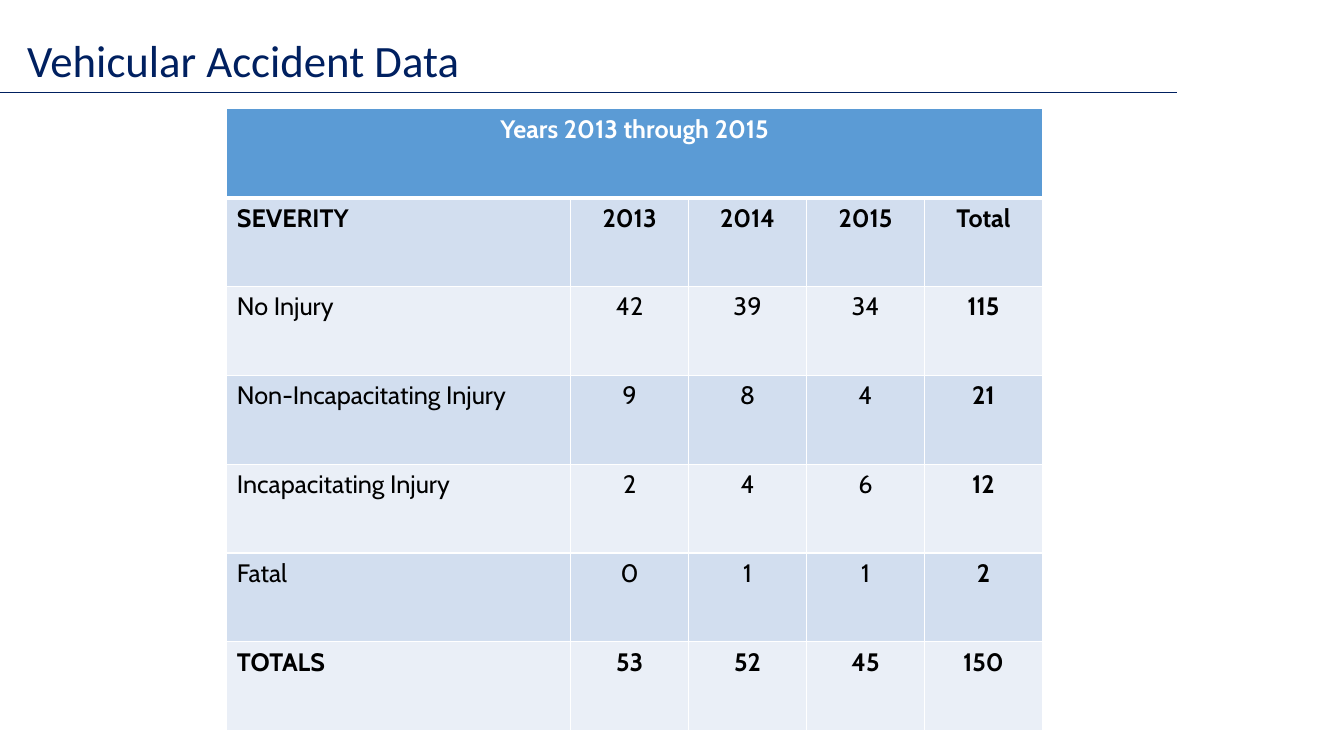
from lxml.etree import SubElement
from pptx import Presentation
from pptx.dml.color import RGBColor
from pptx.enum.shapes import MSO_CONNECTOR as Conn
from pptx.enum.text import MSO_ANCHOR as Anchor, PP_ALIGN as Align
from pptx.oxml.ns import qn
from pptx.util import Inches, Pt

NAVY, WHITE, BLACK = "002060", "FFFFFF", "000000"
HEAD, BANDS = "5B9BD5", ("D2DEEF", "EAEFF7")
ROWS = [
    ["Years 2013 through 2015", "", "", "", ""],
    ["SEVERITY", "2013", "2014", "2015", "Total"],
    ["No Injury", "42", "39", "34", "115"],
    ["Non-Incapacitating Injury", "9", "8", "4", "21"],
    ["Incapacitating Injury", "2", "4", "6", "12"],
    ["Fatal", "0", "1", "1", "2"],
    ["TOTALS", "53", "52", "45", "150"],
]
WIDTHS = [3.41] + [1.17] * 4
HIGH = 6.17 / len(ROWS)


def style(para, text, face, size, color, bold=False):
    """Add one formatted run to a paragraph."""
    run = para.add_run()
    run.text = text
    font = run.font
    font.name, font.size, font.bold = face, Pt(size), bold
    font.color.rgb = RGBColor.from_string(color)


def edge(cell, side, width):
    """Draw one white border of a cell."""
    line = SubElement(cell._tc.get_or_add_tcPr(), qn("a:ln" + side), w=str(Pt(width)))
    fill = SubElement(line, qn("a:solidFill"))
    SubElement(fill, qn("a:srgbClr"), val=WHITE)


deck = Presentation()
deck.slide_width, deck.slide_height = Inches(13.33), Inches(7.5)
slide = deck.slides.add_slide(deck.slide_layouts[5])

# Title and rule
title = slide.shapes.title
title.left, title.top = Inches(0.17), Inches(0)
title.width, title.height = Inches(13), Inches(0.92)
title.text_frame.vertical_anchor = Anchor.BOTTOM
para = title.text_frame.paragraphs[0]
para.alignment, para.line_spacing = Align.LEFT, 0.9
style(para, "Vehicular Accident Data", "Calibri", 32, NAVY)

rule = slide.shapes.add_connector(
    Conn.STRAIGHT, 0, Inches(0.92), Inches(11.67), Inches(0.92))
rule.line.color.rgb = RGBColor.from_string(NAVY)
rule.line.width = Pt(0.5)
SubElement(rule._element.spPr, qn("a:effectLst"))

# Accident table
table = slide.shapes.add_table(
    len(ROWS), len(WIDTHS), Inches(2.25), Inches(1.08),
    Inches(sum(WIDTHS)), Inches(HIGH * len(ROWS))).table
for col, width in zip(table.columns, WIDTHS):
    col.width = Inches(width)
for row in table.rows:
    row.height = Inches(HIGH)

last = len(ROWS) - 1
for r, row in enumerate(ROWS):
    for c, text in enumerate(row):
        cell = table.cell(r, c)
        for side in "LRTB":
            thick = (r, side) in ((0, "B"), (1, "T"))
            edge(cell, side, 3 if thick else 1)
        cell.fill.solid()
        cell.fill.fore_color.rgb = RGBColor.from_string(BANDS[(r - 1) % 2] if r else HEAD)
        if text:
            para = cell.text_frame.paragraphs[0]
            para.alignment = Align.LEFT if r and c == 0 else Align.CENTER
            bold = r in (0, 1, last) or c == len(row) - 1
            style(para, text, "Cabin", 18, BLACK if r else WHITE, bold)
table.cell(0, 0).merge(table.cell(0, len(WIDTHS) - 1))

deck.save("out.pptx")
